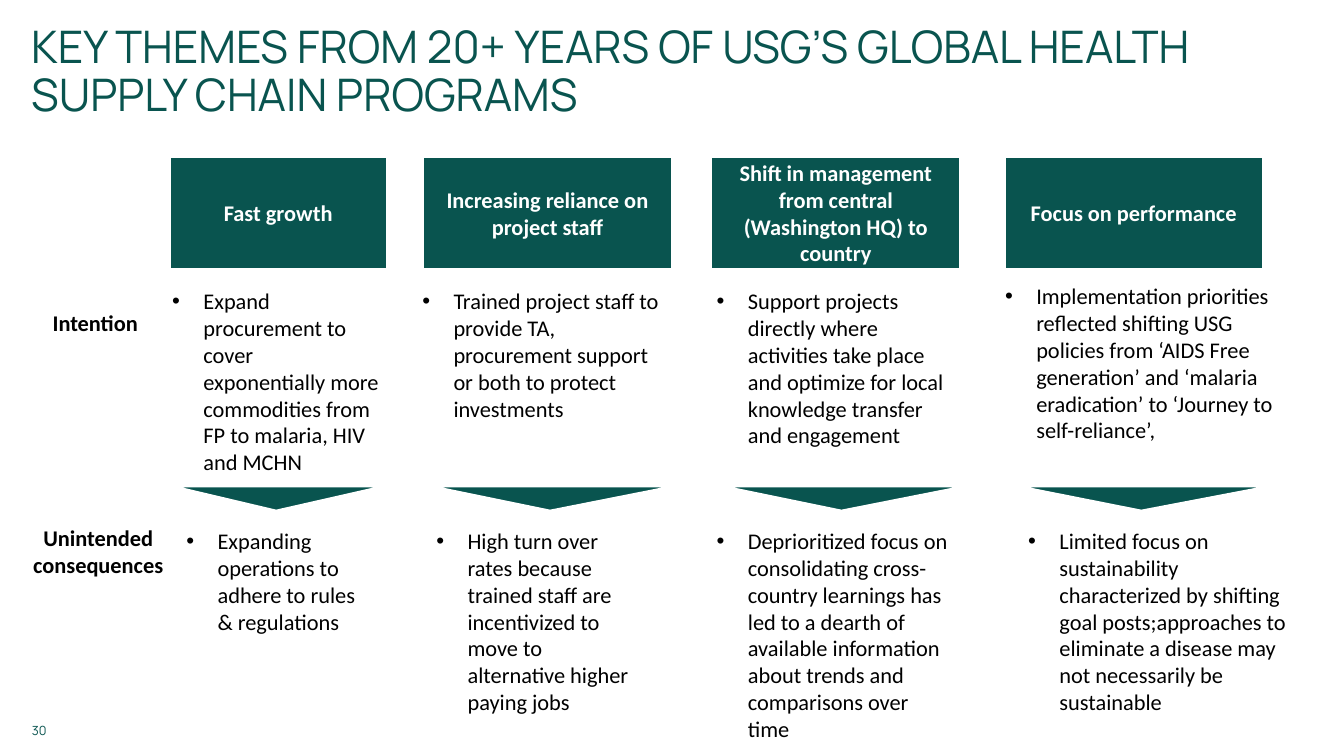
import dataclasses

import pptx
import pptx.dml.color
import pptx.enum.shapes
import pptx.enum.text
import pptx.oxml
import pptx.oxml.ns
import pptx.util

SHAPES = pptx.enum.shapes.MSO_SHAPE
ALIGN = pptx.enum.text.PP_ALIGN
ANCHOR = pptx.enum.text.MSO_ANCHOR
AUTO_SIZE = pptx.enum.text.MSO_AUTO_SIZE

COLORS = {"green": "09544F", "white": "FFFFFF", "black": "000000"}
BODY_FONT, TITLE_FONT = "Calibri", "Manrope"
COLUMNS, ROWS = 133.3, 75
CELL = pptx.util.Inches(0.1)
HEADER_HEIGHT, ARROW_HEIGHT = 11.2, 2.5
ARROW_TOP, CONSEQUENCE_TOP = 32.7, 36.3


@dataclasses.dataclass
class Box:
    left: float
    top: float
    width: float
    height: float

    def inner(self, left, top, width, height):
        return Box(self.left + left, self.top + top, width, height)

    def lengths(self):
        return [round(value * CELL) for value in dataclasses.astuple(self)]


@dataclasses.dataclass
class Theme:
    heading: str
    box: Box
    intention: str
    intention_box: tuple
    arrow_shift: float
    consequence: str
    consequence_box: tuple
    consequence_outlined: bool = False


THEMES = [
    Theme("Fast growth", Box(16.8, 15.5, 21.6, 59.5),
          "Expand procurement to cover exponentially more commodities "
          "from FP to malaria, HIV and MCHN",
          (-0.7, 12.5, 22.5, 19.9), 0,
          "Expanding operations to adhere to rules & regulations",
          (0.7, CONSEQUENCE_TOP, 18.8, 14.5), True),
    Theme("Increasing reliance on project staff", Box(41.9, 15.5, 24.8, 59.5),
          "Trained project staff to provide TA, procurement support or both "
          "to protect investments",
          (-1, 12.5, 25.7, 14.5), 0.5,
          "High turn over rates because trained staff are incentivized to "
          "move to alternative higher paying jobs",
          (0.4, CONSEQUENCE_TOP, 21.6, 19.9)),
    Theme("Shift in management from central (Washington HQ) to country",
          Box(70.5, 15.5, 24.8, 59.5),
          "Support projects directly where activities take place and optimize "
          "for local knowledge transfer and engagement",
          (-0.4, 12.5, 25.7, 17.2), 0.8,
          "Deprioritized focus on consolidating cross-country learnings has "
          "led to a dearth of available information about trends and "
          "comparisons over time",
          (-0.4, CONSEQUENCE_TOP, 25.6, 22.6)),
    Theme("Focus on performance", Box(99.6, 15.5, 25.7, 59.5),
          "Implementation priorities reflected shifting USG policies from "
          "‘AIDS Free generation’ and ‘malaria eradication’ to ‘Journey to "
          "self-reliance’,",
          (-0.9, 12, 29.7, 17.2), 1,
          "Limited focus on sustainability characterized by shifting goal "
          "posts;approaches to eliminate a disease may not necessarily be "
          "sustainable",
          (1.4, CONSEQUENCE_TOP, 28.6, 19.9)),
]


def color(name):
    return pptx.dml.color.RGBColor.from_string(COLORS[name])


def write(shape, text, size, color_name, font_name=BODY_FONT, bold=False,
          align=ALIGN.LEFT, anchor=ANCHOR.TOP):
    frame = shape.text_frame
    frame.word_wrap = True
    frame.vertical_anchor = anchor
    frame.margin_left = frame.margin_right = pptx.util.Inches(0.1)
    frame.margin_top = frame.margin_bottom = pptx.util.Inches(0.05)
    frame.text = text
    paragraph = frame.paragraphs[0]
    paragraph.alignment = align
    paragraph.font.name = font_name
    paragraph.font.size = pptx.util.Pt(size)
    paragraph.font.bold = bold
    paragraph.font.color.rgb = color(color_name)
    return paragraph


def add_bullet(paragraph):
    properties = paragraph._p.get_or_add_pPr()
    indent = pptx.util.Inches(0.31)
    properties.set("marL", str(indent))
    properties.set("indent", str(-indent))
    namespace = pptx.oxml.ns.nsdecls("a")
    for xml in (
        f'<a:buClr {namespace}><a:srgbClr val="{COLORS["black"]}"/></a:buClr>',
        f'<a:buFont {namespace} typeface="Arial"/>',
        f'<a:buChar {namespace} char="•"/>',
    ):
        properties.insert_element_before(
            pptx.oxml.parse_xml(xml), "a:tabLst", "a:defRPr", "a:extLst")


def add_block(slide, kind, box, line_width, filled=True):
    shape = slide.shapes.add_shape(kind, *box.lengths())
    shape.shadow.inherit = False
    if filled:
        shape.fill.solid()
        shape.fill.fore_color.rgb = color("green")
    else:
        shape.fill.background()
    shape.line.color.rgb = color("white")
    shape.line.width = pptx.util.Pt(line_width)
    return shape


def add_note(slide, box, text, outlined, **style):
    if outlined:
        shape = add_block(slide, SHAPES.RECTANGLE, box, 0.75, filled=False)
    else:
        shape = slide.shapes.add_textbox(*box.lengths())
    paragraph = write(shape, text, 16, "black", **style)
    shape.text_frame.auto_size = AUTO_SIZE.SHAPE_TO_FIT_TEXT
    return paragraph


def add_title(slide, box):
    title = slide.shapes.title
    title.left, title.top, title.width, title.height = box.lengths()
    paragraph = write(
        title, "KEY THEMES FROM 20+ YEARS OF USG’S GLOBAL HEALTH SUPPLY CHAIN PROGRAMS",
        32, "green", TITLE_FONT, anchor=ANCHOR.MIDDLE)
    paragraph.line_spacing = 0.9
    title.text_frame.auto_size = AUTO_SIZE.NONE


def add_row_labels(slide, box):
    label_style = {"bold": True, "align": ALIGN.CENTER}
    add_note(slide, box.inner(1.5, 14.7, 14.7, 3.7), "Intention", True, **label_style)
    add_note(slide, box.inner(0, 36, 18.3, 6.4), "Unintended consequences", False,
             **label_style)


def add_theme(slide, theme):
    box = theme.box
    header = add_block(slide, SHAPES.RECTANGLE,
                       box.inner(0, 0, box.width, HEADER_HEIGHT), 2)
    write(header, theme.heading, 16, "white", bold=True, align=ALIGN.CENTER,
          anchor=ANCHOR.MIDDLE)
    arrow = add_block(slide, SHAPES.ISOSCELES_TRIANGLE,
                      box.inner(theme.arrow_shift, ARROW_TOP, box.width, ARROW_HEIGHT), 2)
    arrow.rotation = 180
    arrow.adjustments[0] = 0.51
    add_bullet(add_note(slide, box.inner(*theme.intention_box), theme.intention, True))
    add_bullet(add_note(slide, box.inner(*theme.consequence_box), theme.consequence,
                        theme.consequence_outlined))


def add_page_number(slide, box):
    shape = slide.shapes.add_textbox(*box.lengths())
    write(shape, "30", 9, "green", TITLE_FONT, align=ALIGN.RIGHT, anchor=ANCHOR.BOTTOM)


def main():
    presentation = pptx.Presentation()
    presentation.slide_width = round(COLUMNS * CELL)
    presentation.slide_height = ROWS * CELL
    slide = presentation.slides.add_slide(presentation.slide_layouts[5])
    add_title(slide, Box(2.1, 0, 126.1, 14.5))
    for theme in THEMES:
        add_theme(slide, theme)
    add_row_labels(slide, Box(0.6, 15.5, 18.3, 59.5))
    add_page_number(slide, Box(0.6, 69.7, 5, 4))
    presentation.save("out.pptx")


if __name__ == "__main__":
    main()
